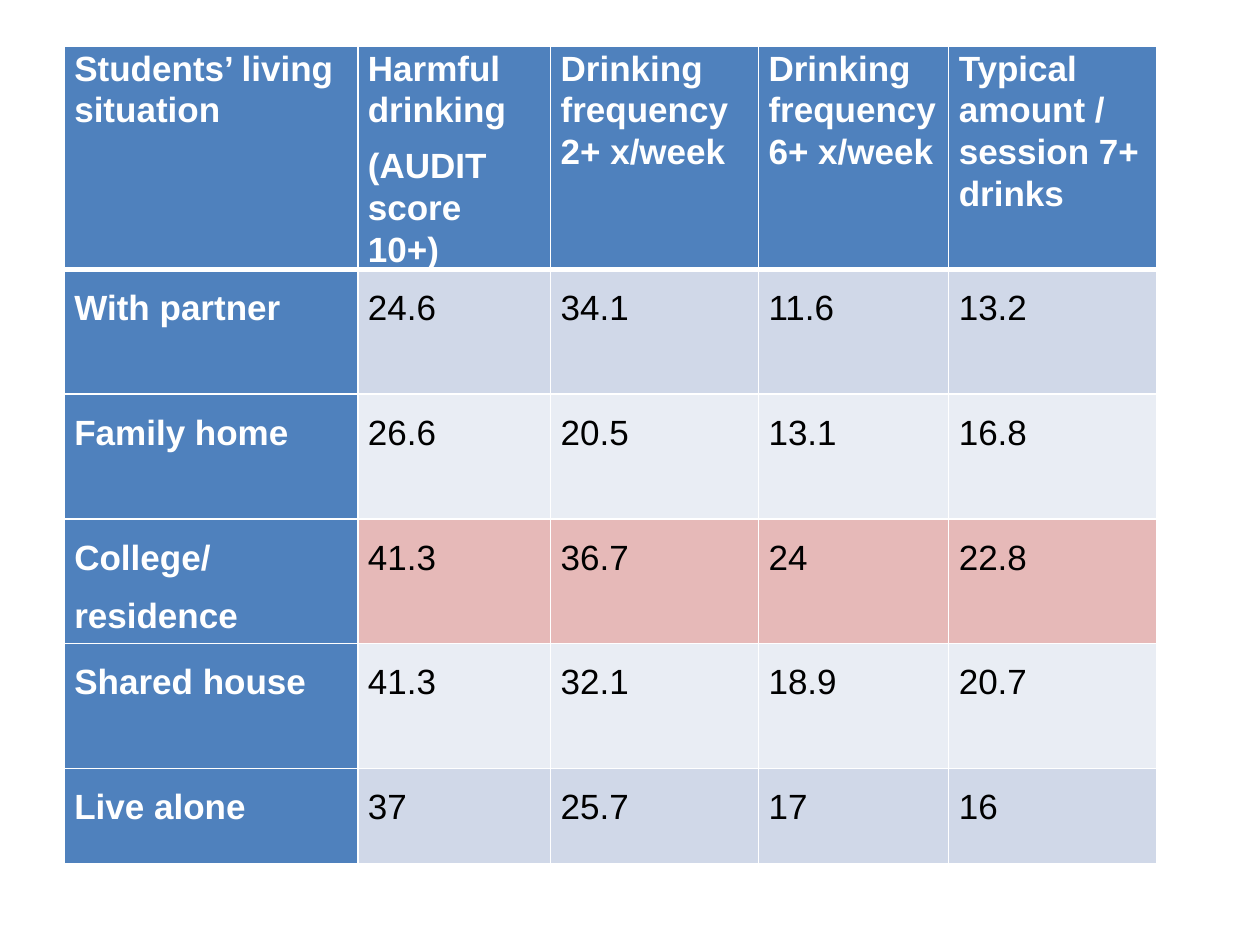
from dataclasses import dataclass

from lxml.etree import SubElement
from pptx import Presentation
from pptx.dml.color import RGBColor
from pptx.oxml.ns import qn
from pptx.util import Inches, Pt


@dataclass(frozen=True)
class Theme:
    font: str = "Arial"
    size: int = 20
    heading_fill: str = "4F81BD"
    heading_text: str = "FFFFFF"
    body_text: str = "000000"
    band_dark: str = "D0D8E8"
    band_light: str = "E9EDF4"
    highlight: str = "E6B9B8"
    rule: str = "FFFFFF"
    thin_rule: int = 1
    thick_rule: int = 3


THEME = Theme()

COLUMN_WIDTHS = [2.33, 1.53, 1.65, 1.51, 1.65]
ROW_HEIGHTS = [1.1, 0.99, 0.99, 0.99, 0.99, 0.76]
HEADINGS = [
    "Students’ living situation",
    "Harmful drinking\n(AUDIT score 10+)",
    "Drinking frequency 2+ x/week",
    "Drinking frequency 6+ x/week",
    "Typical amount / session 7+ drinks",
]
SITUATIONS = [
    ("With partner", "24.6", "34.1", "11.6", "13.2"),
    ("Family home", "26.6", "20.5", "13.1", "16.8"),
    ("College/residence", "41.3", "36.7", "24", "22.8"),
    ("Shared house", "41.3", "32.1", "18.9", "20.7"),
    ("Live alone", "37", "25.7", "17", "16"),
]
HIGHLIGHTED = "College/residence"


def write_text(frame, text, *, color, bold=False, line_spacing=1.5):
    frame.word_wrap = True
    frame.text = text
    for paragraph in frame.paragraphs:
        paragraph.line_spacing = line_spacing
        paragraph.space_after = Pt(8)
        for run in paragraph.runs:
            run.font.name = THEME.font
            run.font.size = Pt(THEME.size)
            run.font.bold = bold
            run.font.color.rgb = RGBColor.from_string(color)


def set_borders(cell, top, bottom):
    properties = cell._tc.get_or_add_tcPr()
    widths = {"L": THEME.thin_rule, "R": THEME.thin_rule, "T": top, "B": bottom}
    for side, width in widths.items():
        line = SubElement(properties, qn(f"a:ln{side}"), w=str(Pt(width)))
        fill = SubElement(line, qn("a:solidFill"))
        SubElement(fill, qn("a:srgbClr"), val=THEME.rule)


def style_cell(cell, fill, top=THEME.thin_rule, bottom=THEME.thin_rule):
    cell.margin_left = cell.margin_right = Inches(0.08)
    cell.margin_top = cell.margin_bottom = 0
    set_borders(cell, top, bottom)
    cell.fill.solid()
    cell.fill.fore_color.rgb = RGBColor.from_string(fill)


def add_drinking_table(slide):
    frame = slide.shapes.add_table(
        len(ROW_HEIGHTS), len(COLUMN_WIDTHS),
        Inches(0.51), Inches(0.37), Inches(8.66), Inches(6.64))
    table = frame.table
    for column, width in zip(table.columns, COLUMN_WIDTHS):
        column.width = Inches(width)
    for row, height in zip(table.rows, ROW_HEIGHTS):
        row.height = Inches(height)
    # The heading row grows to fit its text, so the frame is taller than its rows
    frame.height = Inches(6.64)

    # Column headings
    for index, heading in enumerate(HEADINGS):
        cell = table.cell(0, index)
        write_text(cell.text_frame, heading, color=THEME.heading_text,
                   bold=True, line_spacing=1.07)
        style_cell(cell, THEME.heading_fill, bottom=THEME.thick_rule)

    # Living situations: banded rows, one of them highlighted
    for number, situation in enumerate(SITUATIONS, start=1):
        band = THEME.band_dark if number % 2 else THEME.band_light
        if situation[0] == HIGHLIGHTED:
            band = THEME.highlight
        top = THEME.thick_rule if number == 1 else THEME.thin_rule
        for index, value in enumerate(situation):
            cell = table.cell(number, index)
            is_label = index == 0
            write_text(cell.text_frame, value, bold=is_label,
                       color=THEME.heading_text if is_label else THEME.body_text)
            style_cell(cell, THEME.heading_fill if is_label else band, top=top)


def main():
    presentation = Presentation()
    presentation.slide_width = Inches(10)
    presentation.slide_height = Inches(7.5)
    slide = presentation.slides.add_slide(presentation.slide_layouts[6])
    add_drinking_table(slide)
    presentation.save("out.pptx")


if __name__ == "__main__":
    main()
